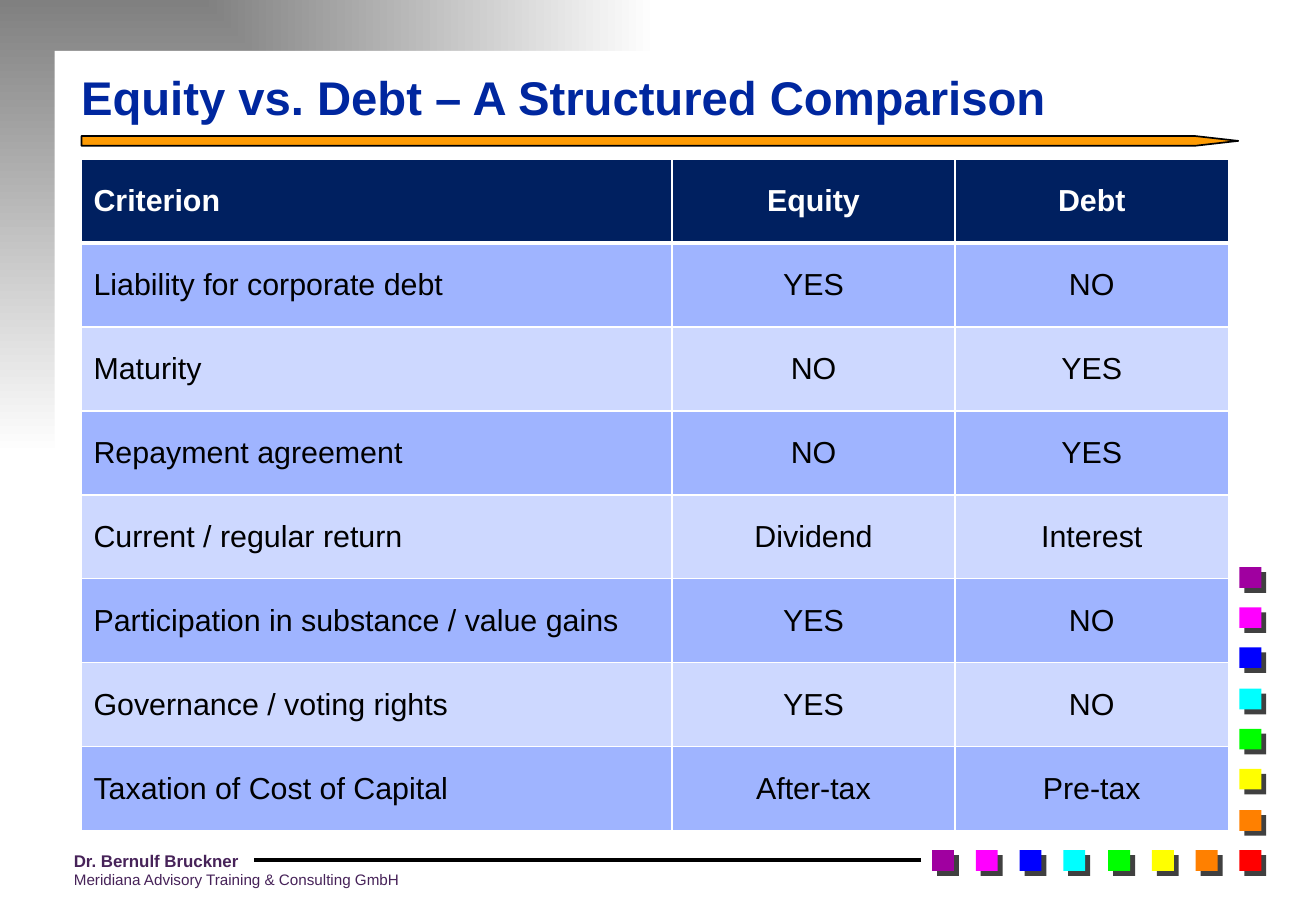
from dataclasses import dataclass

from lxml import etree
from pptx import Presentation
from pptx.dml.color import RGBColor
from pptx.enum.shapes import MSO_CONNECTOR, MSO_SHAPE
from pptx.enum.text import MSO_ANCHOR, PP_ALIGN
from pptx.oxml.ns import qn
from pptx.shapes.autoshape import Shape
from pptx.slide import Slide
from pptx.table import _Cell
from pptx.text.text import TextFrame
from pptx.util import Emu, Pt

RECTANGLE, PENTAGON = MSO_SHAPE.RECTANGLE, MSO_SHAPE.PENTAGON
STRAIGHT = MSO_CONNECTOR.STRAIGHT
LEFT, CENTER = PP_ALIGN.LEFT, PP_ALIGN.CENTER
MIDDLE, BOTTOM, TOP = MSO_ANCHOR.MIDDLE, MSO_ANCHOR.BOTTOM, MSO_ANCHOR.TOP

FONT = "Arial"
EMU_PER_PX = 9144  # 100 px to the inch

WHITE = RGBColor(0xFF, 0xFF, 0xFF)
BLACK = RGBColor(0x00, 0x00, 0x00)
GRAY = RGBColor(0x80, 0x80, 0x80)
SHADOW_GRAY = RGBColor(0x40, 0x40, 0x40)
TITLE_BLUE = RGBColor(0x00, 0x27, 0x9F)
FOOTER_PURPLE = RGBColor(0x47, 0x23, 0x59)
BAR_ORANGE = RGBColor(0xFE, 0x9B, 0x03)
HEADER_NAVY = RGBColor(0x00, 0x20, 0x60)
BAND_DARK = RGBColor(0x9F, 0xB4, 0xFF)
BAND_LIGHT = RGBColor(0xCD, 0xD8, 0xFF)
RED = RGBColor(0xFF, 0x00, 0x00)
RAINBOW = (
    RGBColor(0xFF, 0x80, 0x00),
    RGBColor(0xFF, 0xFF, 0x00),
    RGBColor(0x00, 0xFF, 0x00),
    RGBColor(0x00, 0xFF, 0xFF),
    RGBColor(0x00, 0x00, 0xFF),
    RGBColor(0xFF, 0x00, 0xFF),
    RGBColor(0xA0, 0x00, 0xA0),
)

CORNER_LEFT, CORNER_TOP = 1020, 700
STEP_LEFT, STEP_UP = 36.14, 33.33
COLUMN_WIDTHS = (486, 233, 225)


@dataclass(frozen=True)
class Box:
    left: int
    top: int
    width: int
    height: int

    def emu(self) -> tuple[Emu, Emu, Emu, Emu]:
        return px(self.left), px(self.top), px(self.width), px(self.height)


@dataclass(frozen=True)
class Row:
    criterion: str
    equity: str
    debt: str

    def texts(self) -> tuple[str, str, str]:
        return self.criterion, self.equity, self.debt


ROWS = (
    Row("Criterion", "Equity", "Debt"),
    Row("Liability for corporate debt", "YES", "NO"),
    Row("Maturity", "NO", "YES"),
    Row("Repayment agreement", "NO", "YES"),
    Row("Current / regular return", "Dividend", "Interest"),
    Row("Participation in substance / value gains", "YES", "NO"),
    Row("Governance / voting rights", "YES", "NO"),
    Row("Taxation of Cost of Capital", "After-tax", "Pre-tax"),
)


def px(length: int) -> Emu:
    return Emu(length * EMU_PER_PX)


def write(frame: TextFrame, text: str, *, size: int, color: RGBColor,
          bold: bool = False, align: PP_ALIGN = LEFT) -> None:
    """Fill the first paragraph, or add another if it already has text."""
    paragraph = frame.add_paragraph() if frame.text else frame.paragraphs[0]
    paragraph.alignment = align
    run = paragraph.add_run()
    run.text = text
    run.font.name = FONT
    run.font.size = Pt(size)
    run.font.bold = bold
    run.font.color.rgb = color


def add_text_box(slide: Slide, box: Box, anchor: MSO_ANCHOR) -> TextFrame:
    frame = slide.shapes.add_textbox(*box.emu()).text_frame
    frame.word_wrap = True
    frame.vertical_anchor = anchor
    return frame


def add_block(slide: Slide, box: Box, color: RGBColor,
              preset: MSO_SHAPE = RECTANGLE) -> Shape:
    shape = slide.shapes.add_shape(preset, *box.emu())
    shape.shadow.inherit = False
    shape.fill.solid()
    shape.fill.fore_color.rgb = color
    shape.line.fill.background()
    return shape


def add_background(slide: Slide) -> None:
    """Gray fading from the top left corner, with a white panel on top."""
    backdrop = add_block(slide, Box(0, 0, 1082, 749), WHITE)
    backdrop.fill.gradient()
    for stop, color in zip(backdrop.fill.gradient_stops, (GRAY, WHITE)):
        stop.color.rgb = color
    linear = next(backdrop.element.iter(qn("a:lin")))
    gradient_path = etree.Element(qn("a:path"), {"path": "rect"})
    etree.SubElement(gradient_path, qn("a:fillToRect"), r="100000", b="100000")
    linear.getparent().replace(linear, gradient_path)
    add_block(slide, Box(45, 42, 1037, 707), WHITE)


def add_square(slide: Slide, left: int, top: int, color: RGBColor) -> None:
    square = add_block(slide, Box(left, top, 18, 17), color)
    effects = square.element.spPr.find(qn("a:effectLst"))
    shadow = etree.SubElement(effects, qn("a:outerShdw"), dist=str(Pt(4.2)),
                              dir="2700000", algn="ctr", rotWithShape="0")
    etree.SubElement(shadow, qn("a:srgbClr"), val=str(SHADOW_GRAY))


def add_squares(slide: Slide) -> None:
    add_square(slide, CORNER_LEFT, CORNER_TOP, RED)
    for index, color in enumerate(RAINBOW, start=1):
        add_square(slide, round(CORNER_LEFT - index * STEP_LEFT), CORNER_TOP, color)
        add_square(slide, CORNER_LEFT, round(CORNER_TOP - index * STEP_UP), color)


def add_footer(slide: Slide) -> None:
    rule = slide.shapes.add_connector(STRAIGHT, px(758), px(708), px(209), px(708))
    rule.line.color.rgb = BLACK
    rule.line.width = Pt(2)
    etree.SubElement(rule.element.spPr, qn("a:effectLst"))
    frame = add_text_box(slide, Box(51, 695, 324, 42), TOP)
    write(frame, "Dr. Bernulf Bruckner", size=10, color=FOOTER_PURPLE, bold=True)
    write(frame, "Meridiana Advisory Training & Consulting GmbH",
          size=9, color=FOOTER_PURPLE)


def add_title(slide: Slide) -> None:
    bar = add_block(slide, Box(67, 112, 952, 8), BAR_ORANGE, PENTAGON)
    bar.adjustments[0] = 4.42
    bar.line.color.rgb = BLACK
    bar.line.width = Pt(1)
    frame = add_text_box(slide, Box(57, 44, 946, 64), BOTTOM)
    write(frame, "Equity vs. Debt – A Structured Comparison",
          size=28, color=TITLE_BLUE, bold=True)


def set_borders(cell: _Cell, top: int, bottom: int) -> None:
    """White borders; top and bottom widths in points, sides 1 point."""
    properties = cell._tc.get_or_add_tcPr()
    for side, width in (("L", 1), ("R", 1), ("T", top), ("B", bottom)):
        line = etree.SubElement(properties, qn(f"a:ln{side}"), w=str(Pt(width)))
        fill = etree.SubElement(line, qn("a:solidFill"))
        etree.SubElement(fill, qn("a:srgbClr"), val=str(WHITE))


def add_comparison_table(slide: Slide) -> None:
    table = slide.shapes.add_table(
        len(ROWS), len(COLUMN_WIDTHS), *Box(67, 131, 944, 553).emu()).table
    table.horz_banding = False
    for column, width in zip(table.columns, COLUMN_WIDTHS):
        column.width = px(width)
    for row_index, row in enumerate(ROWS):
        is_header = row_index == 0
        band = BAND_DARK if row_index % 2 else BAND_LIGHT
        for column_index, text in enumerate(row.texts()):
            cell = table.cell(row_index, column_index)
            set_borders(cell, top=3 if row_index == 1 else 1,
                        bottom=3 if is_header else 1)
            cell.fill.solid()
            cell.fill.fore_color.rgb = HEADER_NAVY if is_header else band
            cell.vertical_anchor = MIDDLE
            write(cell.text_frame, text, size=18, bold=is_header,
                  color=WHITE if is_header else BLACK,
                  align=CENTER if column_index else LEFT)


def main() -> None:
    presentation = Presentation()
    presentation.slide_width, presentation.slide_height = px(1083), px(750)
    slide = presentation.slides.add_slide(presentation.slide_layouts[6])
    add_background(slide)
    add_squares(slide)
    add_footer(slide)
    add_title(slide)
    add_comparison_table(slide)
    presentation.save("out.pptx")


if __name__ == "__main__":
    main()
